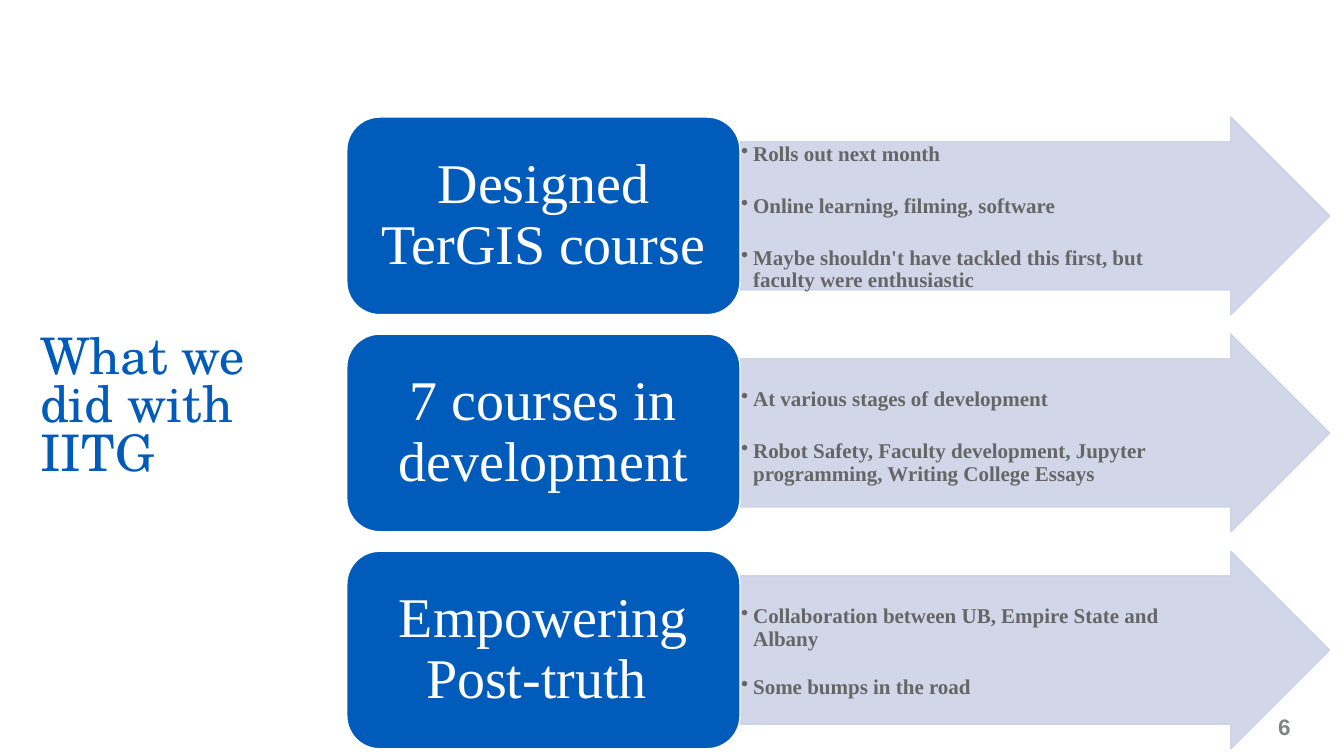
from lxml.etree import SubElement
from pptx import Presentation
from pptx.dml.color import RGBColor
from pptx.enum.shapes import MSO_SHAPE
from pptx.enum.text import MSO_ANCHOR, PP_ALIGN
from pptx.oxml.ns import qn
from pptx.util import Cm, Pt

BLUE = RGBColor(0x00, 0x5B, 0xBB)
LAVENDER = RGBColor(0xCC, 0xD2, 0xE7)
DARK_GRAY = RGBColor(0x66, 0x66, 0x66)
NUMBER_GRAY = RGBColor(0x82, 0x83, 0x83)
WHITE = RGBColor(0xFF, 0xFF, 0xFF)

ROW_TOP = 2.95
ROW_PITCH = 5.47
ROW_HEIGHT = 4.98
CARD_LEFT = 8.74
CARD_WIDTH = 9.91
ARROW_WIDTH = 14.86

ROWS = [
    ("Designed TerGIS course", 0.03, 21, [
        "Rolls out next month",
        "Online learning, filming, software",
        "Maybe shouldn't have tackled this first, but faculty were enthusiastic",
    ]),
    ("7 courses in development", 0.74, 21, [
        "At various stages of development",
        "Robot Safety, Faculty development, Jupyter programming, Writing College Essays",
    ]),
    ("Empowering Post-truth ", 0.74, 18.5, [
        "Collaboration between UB, Empire State and Albany",
        "Some bumps in the road",
    ]),
]


class SlideBuilder:
    """Holds the text style and the current slide, and adds its elements."""

    body_font = "Times New Roman"

    def __init__(self, slide):
        self.slide = slide

    def set_frame(self, frame, anchor, margins):
        frame.word_wrap = True
        frame.vertical_anchor = anchor
        (frame.margin_left, frame.margin_top,
         frame.margin_right, frame.margin_bottom) = map(Cm, margins)

    def set_paragraph(self, paragraph, text, font, size, color, align, spacing, bold=False):
        paragraph.text = text
        paragraph.alignment = align
        paragraph.line_spacing = spacing
        paragraph.font.name = font
        paragraph.font.size = Pt(size)
        paragraph.font.bold = bold
        paragraph.font.color.rgb = color

    def add_label(self, box, text, font, size, color, align, anchor, spacing=1.0, bold=False):
        frame = self.slide.shapes.add_textbox(*map(Cm, box)).text_frame
        self.set_frame(frame, anchor, (0.25, 0.13, 0.25, 0.13))
        self.set_paragraph(frame.paragraphs[0], text, font, size, color, align, spacing, bold)

    def add_block(self, kind, left, top, width, fill, line):
        shape = self.slide.shapes.add_shape(
            kind, Cm(left), Cm(top), Cm(width), Cm(ROW_HEIGHT))
        shape.shadow.inherit = False
        shape.fill.solid()
        shape.fill.fore_color.rgb = fill
        shape.line.color.rgb = line
        shape.line.width = Pt(1)
        return shape

    def add_arrow(self, top, bullets, text_top, gap):
        arrow = self.add_block(MSO_SHAPE.RIGHT_ARROW, CARD_LEFT + CARD_WIDTH, top,
                               ARROW_WIDTH, LAVENDER, LAVENDER)
        arrow.adjustments[0] = 0.75
        arrow.adjustments[1] = 0.5
        for color in arrow._element.spPr.iter(qn("a:srgbClr")):
            SubElement(color, qn("a:alpha"), val="90000")
        frame = arrow.text_frame
        self.set_frame(frame, MSO_ANCHOR.TOP, (0.03, text_top, 1.24, 0.03))
        for index, text in enumerate(bullets):
            paragraph = frame.add_paragraph() if index else frame.paragraphs[0]
            properties = paragraph._p.get_or_add_pPr()
            properties.set("marL", str(Cm(0.3)))
            properties.set("indent", str(Cm(-0.3)))
            SubElement(properties, qn("a:buChar"), char="•")
            self.set_paragraph(paragraph, text, self.body_font, 15, DARK_GRAY,
                               PP_ALIGN.LEFT, 0.9, True)
            if index:
                paragraph.space_before = Pt(gap)

    def add_card(self, top, text):
        card = self.add_block(MSO_SHAPE.ROUNDED_RECTANGLE, CARD_LEFT, top,
                              CARD_WIDTH, BLUE, WHITE)
        self.set_frame(card.text_frame, MSO_ANCHOR.MIDDLE, (0.42, 0.21, 0.42, 0.21))
        self.set_paragraph(card.text_frame.paragraphs[0], text, self.body_font, 40,
                           WHITE, PP_ALIGN.CENTER, 0.9)


def main():
    presentation = Presentation()
    presentation.slide_width = Cm(33.87)
    presentation.slide_height = Cm(19.05)
    builder = SlideBuilder(presentation.slides.add_slide(presentation.slide_layouts[6]))
    builder.add_label((0.76, 5.21, 7.06, 7.04), "What we did with IITG", "TeX Gyre Schola",
                      36, BLUE, PP_ALIGN.LEFT, MSO_ANCHOR.BOTTOM, 0.8)
    for index, (heading, text_top, gap, bullets) in enumerate(ROWS):
        top = ROW_TOP + index * ROW_PITCH
        builder.add_arrow(top, bullets, text_top, gap)
        builder.add_card(top, heading)
    builder.add_label((30.76, 17.58, 2.01, 1.47), "6", "Arial", 16, NUMBER_GRAY,
                      PP_ALIGN.RIGHT, MSO_ANCHOR.MIDDLE, bold=True)
    presentation.save("out.pptx")


if __name__ == "__main__":
    main()
